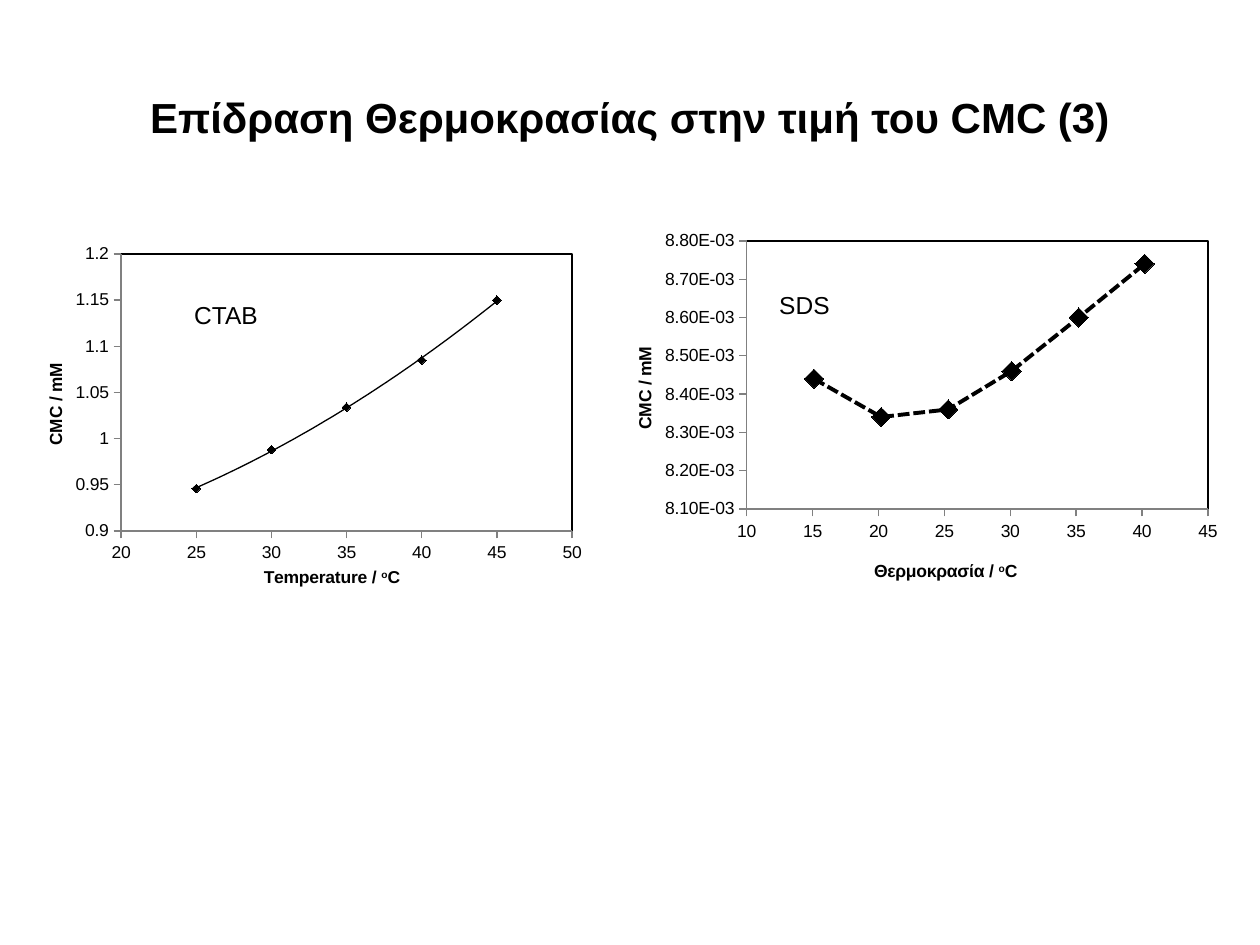
"""Build a slide with two scatter charts of CMC against temperature."""
from lxml.etree import SubElement
from pptx import Presentation
from pptx.chart.data import XyChartData
from pptx.dml.color import RGBColor
from pptx.enum.chart import XL_CHART_TYPE, XL_MARKER_STYLE, XL_TICK_MARK
from pptx.enum.dml import MSO_LINE
from pptx.enum.text import MSO_ANCHOR, MSO_AUTO_SIZE, PP_ALIGN
from pptx.oxml import parse_xml
from pptx.oxml.ns import nsdecls, qn
from pptx.util import Emu, Pt

PX = 914400 / 126
FONT = "Arial"
COLORS = {"ink": "000000", "axis": "808080"}
INK = RGBColor.from_string(COLORS["ink"])
BORDER = (f'<a:ln w="9525"><a:solidFill><a:srgbClr val="{COLORS["ink"]}"/>'
          '</a:solidFill></a:ln>')


def write(frame, text, size=10, bold=False):
    """Fill a frame; pieces between ^ marks are raised."""
    para = frame.paragraphs[0]
    para.alignment = PP_ALIGN.CENTER
    for n, piece in enumerate(text.split("^")):
        run = para.add_run()
        run.text = piece
        run.font.name, run.font.size, run.font.bold = FONT, Pt(size), bold
        run.font.color.rgb = INK
        if n % 2:
            run.font._element.set("baseline", "30000")


def place(parent, index, whole, spot, inner=False):
    """Give a chart part a fixed place, from px on the slide."""
    for old in parent.findall(qn("c:layout")):
        parent.remove(old)
    layout = parse_xml(f'<c:layout {nsdecls("c")}><c:manualLayout/></c:layout>')
    parent.insert(index, layout)
    left, top, width, height = whole
    parts = [("xMode", "edge"), ("yMode", "edge"),
             ("x", round((spot[0] - left) / width, 3)),
             ("y", round((spot[1] - top) / height, 3))]
    if inner:
        parts = [("layoutTarget", "inner"), *parts,
                 ("w", round(spot[2] / width, 3)),
                 ("h", round(spot[3] / height, 3))]
    for name, val in parts:
        SubElement(layout[0], qn(f"c:{name}")).set("val", str(val))


deck = Presentation()
deck.slide_width, deck.slide_height = Emu(9144000), Emu(6858000)
slide = deck.slides.add_slide(deck.slide_layouts[5])

title = slide.shapes.title
title.left, title.top, title.width, title.height = (
    Emu(round(n * PX)) for n in (63, 38, 1134, 158))
title.text_frame.vertical_anchor = MSO_ANCHOR.MIDDLE
write(title.text_frame, "Επίδραση Θερμοκρασίας στην τιμή του CMC (3)",
      size=24, bold=True)

plots = [
    dict(box=(25, 244, 576, 350), plot=(121, 254, 451, 283),
         xs=(25, 30, 35, 40, 45), ys=(0.946, 0.988, 1.034, 1.085, 1.15),
         kind=XL_CHART_TYPE.XY_SCATTER, mark=5, fit=True,
         axes=(("Temperature / ^o^C", 20, 50, 5, "General", (260, 569)),
               ("CMC / mM", 0.9, 1.2, 0.05, "General", (41, 364))),
         label="CTAB", spot=(181, 294, 90, 43)),
    dict(box=(600, 224, 630, 378), plot=(747, 241, 461, 268),
         xs=(15.1, 20.2, 25.3, 30.1, 35.2, 40.2),
         ys=(0.00844, 0.00834, 0.00836, 0.00846, 0.0086, 0.00874),
         kind=XL_CHART_TYPE.XY_SCATTER_SMOOTH, mark=11, fit=False,
         axes=(("Θερμοκρασία / ^ο^C", 10, 45, 5, "General", (870, 556)),
               ("CMC / mM", 0.0081, 0.0088, 0.0001, "0.00E+00", (630, 344))),
         label="SDS", spot=(766, 284, 77, 43)),
]

for item in plots:
    data = XyChartData()
    points = data.add_series("Series 1")
    for x, y in zip(item["xs"], item["ys"]):
        points.add_data_point(x, y)
    box = [Emu(round(n * PX)) for n in item["box"]]
    chart = slide.shapes.add_chart(item["kind"], *box, data).chart
    chart.has_legend = chart.has_title = False
    chart.font.name, chart.font.size = FONT, Pt(10)
    chart.font.color.rgb = INK
    chart.plots[0].vary_by_categories = False

    axes = (chart.category_axis, chart.value_axis)
    for axis, (text, low, high, step, form, spot) in zip(axes, item["axes"]):
        axis.minimum_scale, axis.maximum_scale = low, high
        axis.major_unit = step
        axis.has_major_gridlines = False
        axis.major_tick_mark = XL_TICK_MARK.OUTSIDE
        axis.minor_tick_mark = XL_TICK_MARK.NONE
        axis.tick_labels.number_format = form
        axis.tick_labels.number_format_is_linked = False
        axis.format.line.color.rgb = RGBColor.from_string(COLORS["axis"])
        axis.format.line.width = Pt(0.75)
        write(axis.axis_title.text_frame, text, bold=True)
        place(axis.axis_title._element, 1, item["box"], spot)

    area = chart._chartSpace.find(".//" + qn("c:plotArea"))
    place(area, 0, item["box"], item["plot"], inner=True)
    area.append(parse_xml(
        f'<c:spPr {nsdecls("c", "a")}><a:noFill/>{BORDER}</c:spPr>'))

    series = chart.plots[0].series[0]
    series.smooth = not item["fit"]
    series.marker.style = XL_MARKER_STYLE.DIAMOND
    series.marker.size = item["mark"]
    series.marker.format.fill.solid()
    series.marker.format.fill.fore_color.rgb = INK
    series.marker.format.line.color.rgb = INK
    line = series.format.line
    if item["fit"]:
        line.fill.background()
        series._element.find(qn("c:xVal")).addprevious(parse_xml(
            f'<c:trendline {nsdecls("c", "a")}><c:spPr>{BORDER}</c:spPr>'
            '<c:trendlineType val="poly"/><c:order val="2"/>'
            '<c:dispRSqr val="0"/><c:dispEq val="0"/></c:trendline>'))
    else:
        line.color.rgb = INK
        line.width = Pt(2.25)
        line.dash_style = MSO_LINE.SQUARE_DOT

    spot = [Emu(round(n * PX)) for n in item["spot"]]
    frame = slide.shapes.add_textbox(*spot).text_frame
    frame.word_wrap = False
    frame.auto_size = MSO_AUTO_SIZE.SHAPE_TO_FIT_TEXT
    write(frame, item["label"], size=14)

deck.save("out.pptx")
